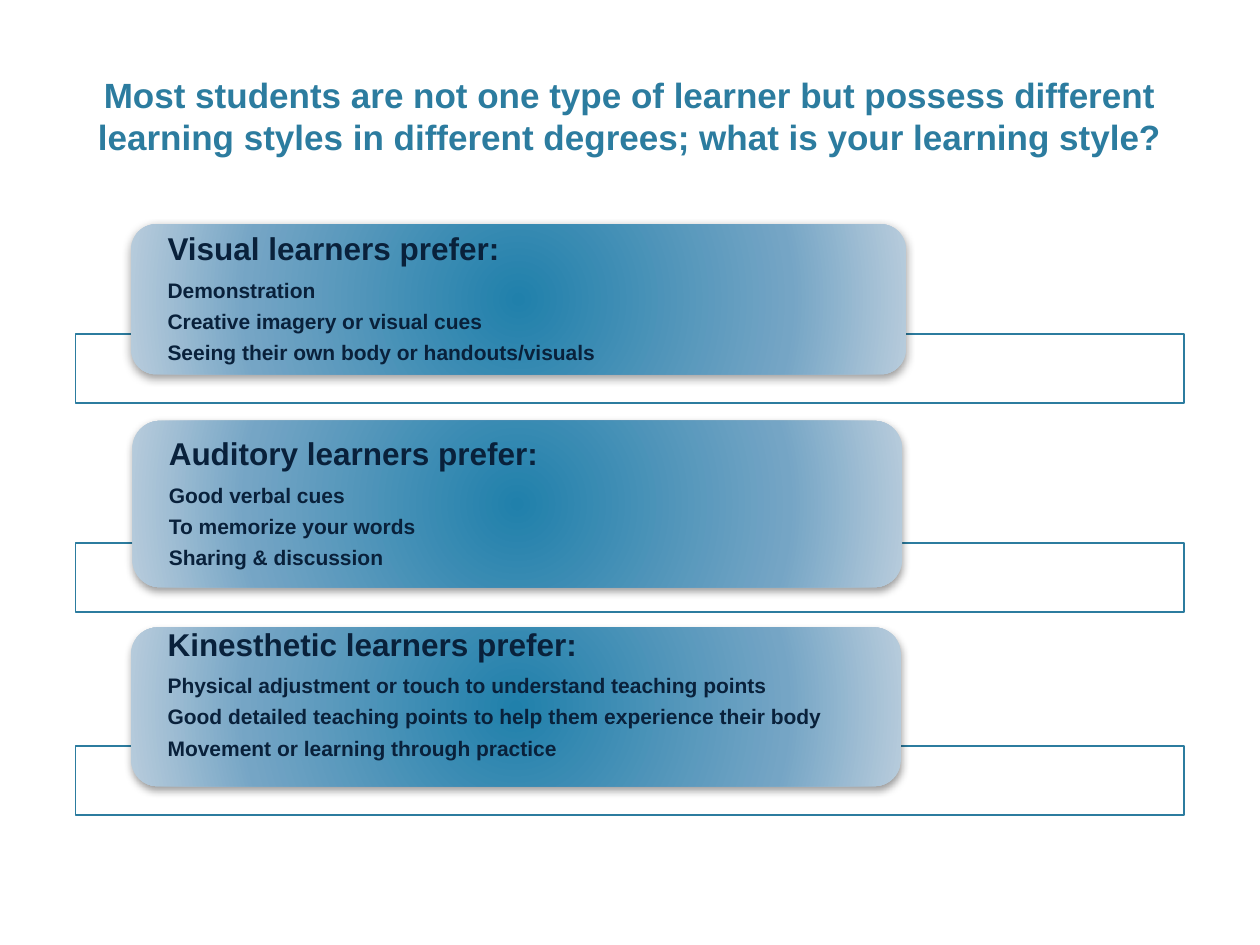
from lxml import etree
from pptx import Presentation
from pptx.dml.color import RGBColor
from pptx.enum.shapes import MSO_SHAPE as SHAPE
from pptx.enum.text import MSO_ANCHOR as ANCHOR, PP_ALIGN as ALIGN
from pptx.oxml.ns import nsdecls, qn
from pptx.util import Inches, Pt

COLORS = {
    "teal": "2C7C9F",
    "navy": "09213B",
    "white": "FFFFFF",
    "shadow": "000000",
    "center": "2080AB",
    "middle": "75A5C5",
    "edge": "B8CCDC",
}
FONT = "Arial"
MARGIN, BAND_WIDTH, FRAME_HEIGHT = 0.6, 8.8, 0.55

TITLE = ("Most students are not one type of learner but possess different "
         "learning styles in different degrees; what is your learning style?")

# Frame top, card box (left, top, width, height), text lift, heading, preferences
LEARNERS = [
    (2.65, (1.04, 1.78, 6.15, 1.19), 0, "Visual learners prefer:",
     ["Demonstration", "Creative imagery or visual cues",
      "Seeing their own body or handouts/visuals"]),
    (4.31, (1.05, 3.34, 6.11, 1.32), 0, "Auditory learners prefer:",
     ["Good verbal cues", "To memorize your words", "Sharing & discussion"]),
    (5.92, (1.04, 4.98, 6.11, 1.26), 0.19, "Kinesthetic learners prefer:",
     ["Physical adjustment or touch to understand teaching points",
      "Good detailed teaching points to help them experience their body",
      "Movement or learning through practice"]),
]


def color(name):
    return RGBColor.from_string(COLORS[name])


def inches(box):
    return [Inches(length) for length in box]


def style_text(paragraph, size, color_name):
    for run in paragraph.runs:
        run.font.name = FONT
        run.font.size = Pt(size)
        run.font.bold = True
        run.font.color.rgb = color(color_name)


def add_title(slide, box):
    title = slide.shapes.add_textbox(*inches(box)).text_frame
    title.word_wrap = True
    title.vertical_anchor = ANCHOR.BOTTOM
    title.text = TITLE
    title.paragraphs[0].alignment = ALIGN.CENTER
    style_text(title.paragraphs[0], 20, "teal")


def add_frame(slide, box):
    frame = slide.shapes.add_shape(SHAPE.RECTANGLE, *inches(box))
    frame.shadow.inherit = False
    frame.fill.solid()
    frame.fill.fore_color.rgb = color("white")
    frame.line.color.rgb = color("teal")
    frame.line.width = Pt(1)


def add_card(slide, box):
    card = slide.shapes.add_shape(SHAPE.ROUNDED_RECTANGLE, *inches(box))
    card.line.fill.background()
    properties = card.element.spPr

    # Radial gradient from the middle of the card
    stops = "".join(
        f'<a:gs pos="{percent * 1000}"><a:srgbClr val="{COLORS[name]}"/></a:gs>'
        for percent, name in [(0, "center"), (69, "middle"), (100, "edge")])
    gradient = etree.fromstring(
        f'<a:gradFill {nsdecls("a")} rotWithShape="1"><a:gsLst>{stops}</a:gsLst>'
        '<a:path path="circle"><a:fillToRect l="50000" t="50000" r="50000" '
        'b="50000"/></a:path></a:gradFill>')
    properties.find(qn("a:prstGeom")).addnext(gradient)

    # Soft shadow below
    properties.append(etree.fromstring(
        f'<a:effectLst {nsdecls("a")}><a:outerShdw blurRad="{Pt(5)}" '
        f'dist="{Pt(2)}" dir="5400000" rotWithShape="0">'
        f'<a:srgbClr val="{COLORS["shadow"]}"><a:alpha val="40000"/></a:srgbClr>'
        '</a:outerShdw></a:effectLst>'))


def add_preferences(slide, box, lift, heading, preferences):
    text = slide.shapes.add_textbox(*inches(box)).text_frame
    text.word_wrap = True
    text.vertical_anchor = ANCHOR.MIDDLE
    text.margin_left = text.margin_right = Inches(0.23)
    text.margin_top, text.margin_bottom = 0, Inches(lift)
    text.text = "\n".join([heading, *preferences])
    for index, paragraph in enumerate(text.paragraphs):
        size = 12 if index else 18
        paragraph.line_spacing = 0.9
        paragraph.space_after = Pt(size * 0.4)
        style_text(paragraph, size, "navy")


def add_learner(slide, frame_top, card_box, lift, heading, preferences):
    add_frame(slide, (MARGIN, frame_top, BAND_WIDTH, FRAME_HEIGHT))
    add_card(slide, card_box)
    left, top, width, height = card_box
    inset = 0.06
    text_box = (left + inset, top + inset, width - 2 * inset, height - 2 * inset)
    add_preferences(slide, text_box, lift, heading, preferences)


def main():
    deck = Presentation()
    deck.slide_width, deck.slide_height = Inches(10), Inches(7.5)
    slide = deck.slides.add_slide(deck.slide_layouts[6])
    add_title(slide, (MARGIN, 0.12, BAND_WIDTH, 1.18))
    for learner in LEARNERS:
        add_learner(slide, *learner)
    deck.save("out.pptx")


if __name__ == "__main__":
    main()
